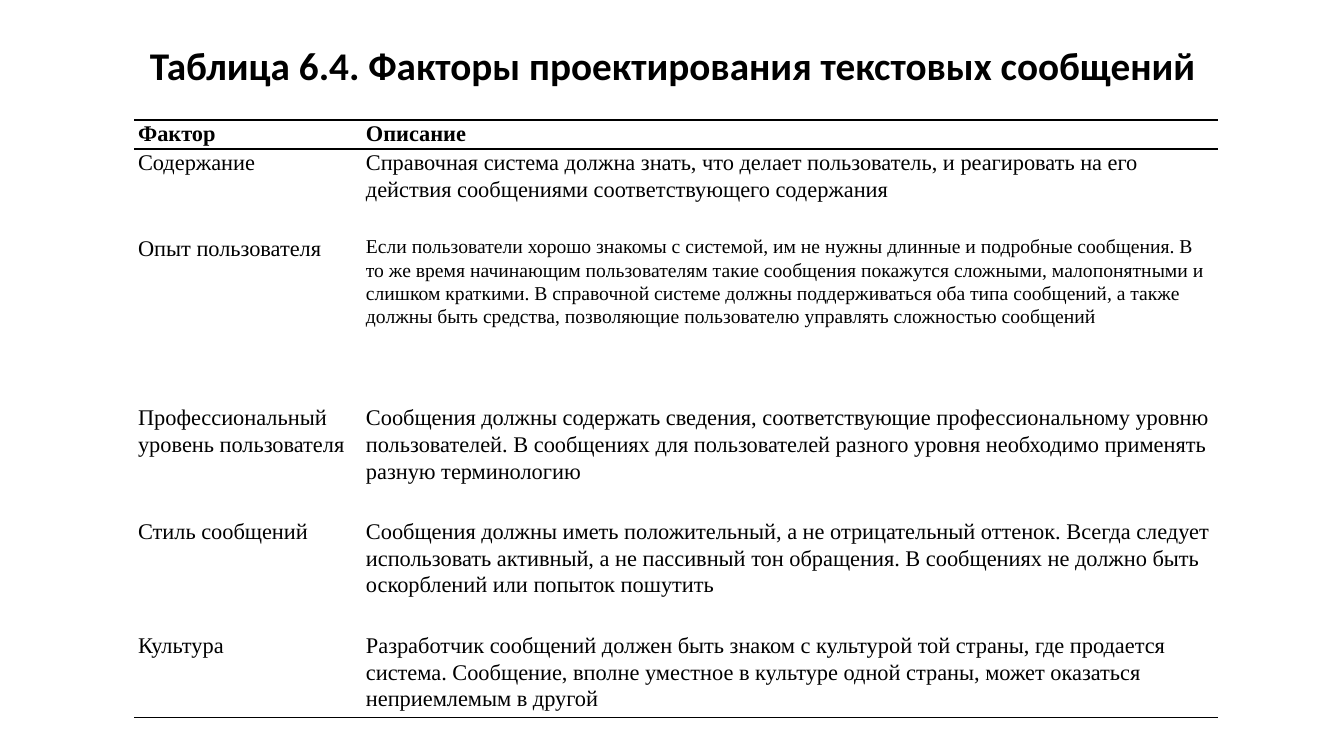
from dataclasses import dataclass

from lxml import etree
from pptx import Presentation
from pptx.dml.color import RGBColor
from pptx.enum.text import MSO_ANCHOR, PP_ALIGN
from pptx.oxml.ns import qn
from pptx.util import Inches, Pt

LEFT, CENTER = PP_ALIGN.LEFT, PP_ALIGN.CENTER
TOP = MSO_ANCHOR.TOP
TITLE_ONLY = 5
PLAIN_TABLE_STYLE = "{2D5ABB26-0587-4C30-8999-92F81FD0307C}"

TITLE = "Таблица 6.4. Факторы проектирования текстовых сообщений"
HEADER = ("Фактор", "Описание")
FACTORS = [
    ("Содержание",
     "Справочная система должна знать, что делает пользователь, и реагировать на его "
     "действия сообщениями соответствующего содержания"),
    ("Опыт пользователя",
     "Если пользователи хорошо знакомы с системой, им не нужны длинные и подробные "
     "сообщения. В то же время начинающим пользователям такие сообщения покажутся "
     "сложными, малопонятными и слишком краткими. В справочной системе должны "
     "поддерживаться оба типа сообщений, а также должны быть средства, позволяющие "
     "пользователю управлять сложностью сообщений"),
    ("Профессиональный уровень пользователя",
     "Сообщения должны содержать сведения, соответствующие профессиональному уровню "
     "пользователей. В сообщениях для пользователей разного уровня необходимо применять "
     "разную терминологию"),
    ("Стиль сообщений",
     "Сообщения должны иметь положительный, а не отрицательный оттенок. Всегда следует "
     "использовать активный, а не пассивный тон обращения. В сообщениях не должно быть "
     "оскорблений или попыток пошутить"),
    ("Культура",
     "Разработчик сообщений должен быть знаком с культурой той страны, где продается "
     "система. Сообщение, вполне уместное в культуре одной страны, может оказаться "
     "неприемлемым в другой"),
]
FACTOR_HEIGHTS = (0.85, 1.68, 1.13, 1.13, 0.85)
LONG_TEXT = 250


@dataclass(frozen=True)
class Theme:
    ink: str = "000000"
    paper: str = "FFFFFF"
    title_font: str = "Calibri"
    table_font: str = "Times New Roman"
    title_size: int = 28
    table_size: int = 16
    dense_size: int = 14
    rule_width: int = 1


def write_text(frame, text, *, font, size, color, bold=False, align=LEFT, spacing=1.0):
    para = frame.paragraphs[0]
    para.alignment = align
    para.line_spacing = spacing
    para.space_before = para.space_after = Pt(0)
    span = para.add_run()
    span.text = text
    span.font.name = font
    span.font.size = Pt(size)
    span.font.bold = bold
    span.font.color.rgb = RGBColor.from_string(color)


class SlideBuilder:
    def __init__(self, slide, theme):
        self.slide = slide
        self.theme = theme

    def title(self, text, left, top, width, height):
        box = self.slide.shapes.title
        box.left, box.top = Inches(left), Inches(top)
        box.width, box.height = Inches(width), Inches(height)
        box.text_frame.vertical_anchor = TOP
        box.text_frame.word_wrap = True
        write_text(box.text_frame, text, font=self.theme.title_font,
                   size=self.theme.title_size, color=self.theme.ink,
                   bold=True, align=CENTER, spacing=0.9)

    def table(self, rows, left, top, widths, heights, bold=False, edges=()):
        """Add a plain table; edges holds (row index, "lnT" or "lnB") rules."""
        frame = self.slide.shapes.add_table(
            len(rows), len(widths), Inches(left), Inches(top),
            Inches(sum(widths)), Inches(sum(heights)))
        table = frame.table
        table.first_row = table.horz_banding = False
        for style in frame.element.iter(qn("a:tableStyleId")):
            style.text = PLAIN_TABLE_STYLE
        for column, width in zip(table.columns, widths):
            column.width = Inches(width)
        for row, height, texts in zip(table.rows, heights, rows):
            row.height = Inches(height)
            for cell, text in zip(row.cells, texts):
                self.fill_cell(cell, text, bold)
        for row_index, side in edges:
            for cell in table.rows[row_index].cells:
                self.rule(cell, side)

    def fill_cell(self, cell, text, bold):
        theme = self.theme
        cell.margin_left = cell.margin_right = Inches(0.04)
        cell.margin_top = cell.margin_bottom = Inches(0)
        cell.fill.solid()
        cell.fill.fore_color.rgb = RGBColor.from_string(theme.paper)
        size = theme.dense_size if len(text) > LONG_TEXT else theme.table_size
        write_text(cell.text_frame, text, font=theme.table_font, size=size,
                   color=theme.ink, bold=bold, spacing=1.07)

    def rule(self, cell, side):
        properties = cell._tc.get_or_add_tcPr()
        line = etree.Element(qn(f"a:{side}"), w=str(Pt(self.theme.rule_width)))
        fill = etree.SubElement(line, qn("a:solidFill"))
        etree.SubElement(fill, qn("a:srgbClr"), val=self.theme.ink)
        position = 1 if properties.find(qn("a:lnT")) is not None else 0
        properties.insert(position, line)


def main():
    deck = Presentation()
    deck.slide_width, deck.slide_height = Inches(13.33), Inches(7.5)
    page = SlideBuilder(deck.slides.add_slide(deck.slide_layouts[TITLE_ONLY]), Theme())
    left, widths = 1.33, (2.26, 8.49)
    page.title(TITLE, 0.92, 0.41, 11.5, 0.64)
    page.table(FACTORS, left, 1.48, widths, FACTOR_HEIGHTS,
               edges=[(0, "lnT"), (len(FACTORS) - 1, "lnB")])
    page.table([HEADER], left, 1.19, widths, [0.28], bold=True,
               edges=[(0, "lnT"), (0, "lnB")])
    deck.save("out.pptx")


if __name__ == "__main__":
    main()
